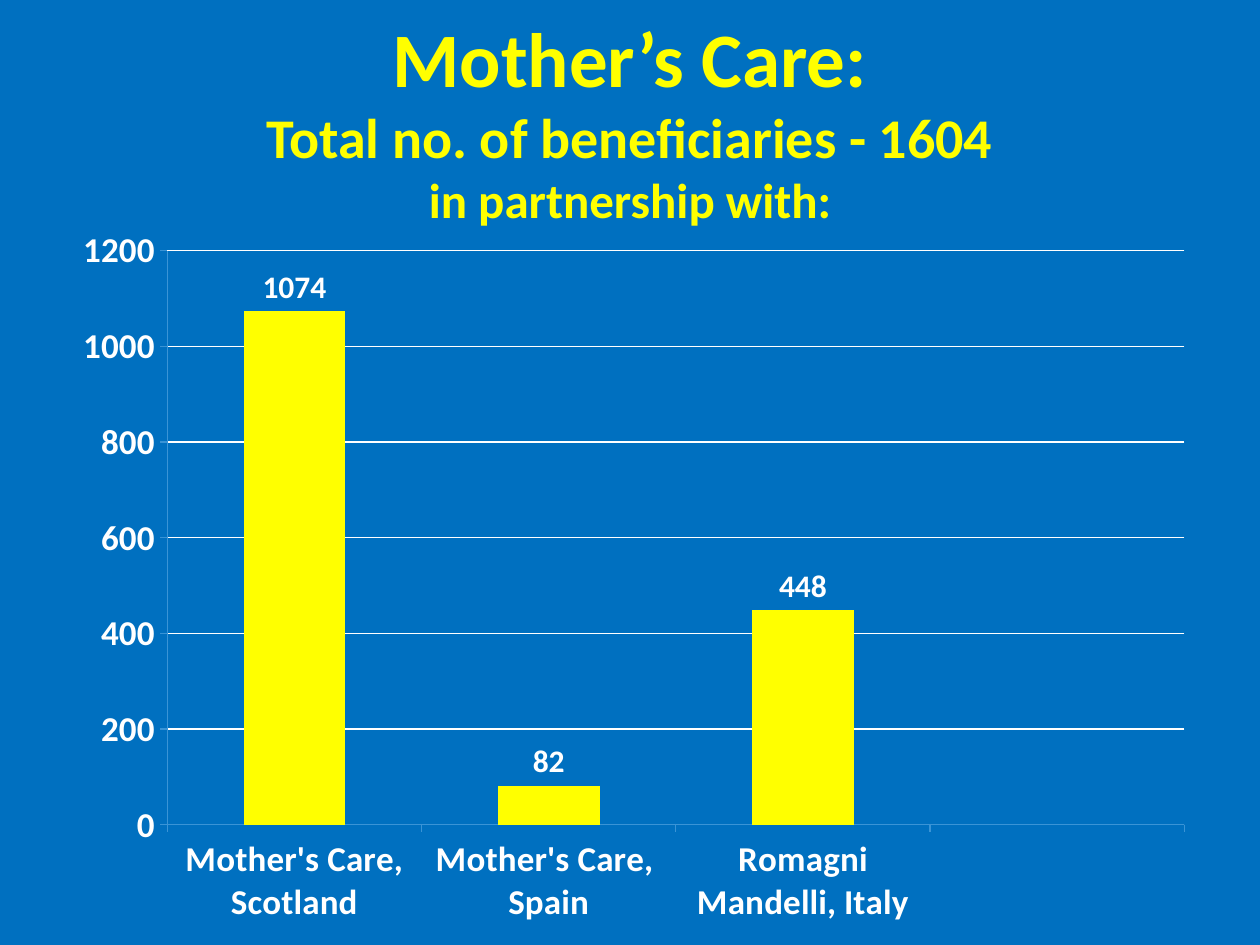
from typing import NamedTuple

from lxml import etree
from pptx import Presentation
from pptx.chart.data import CategoryChartData
from pptx.dml.color import RGBColor
from pptx.enum.chart import XL_CHART_TYPE, XL_LABEL_POSITION, XL_TICK_MARK
from pptx.enum.text import MSO_ANCHOR, PP_ALIGN
from pptx.oxml import parse_xml
from pptx.oxml.ns import nsdecls
from pptx.util import Inches, Pt

COLUMN = XL_CHART_TYPE.COLUMN_CLUSTERED
ABOVE = XL_LABEL_POSITION.OUTSIDE_END
OUT = XL_TICK_MARK.OUTSIDE
MIDDLE, CENTER = MSO_ANCHOR.MIDDLE, PP_ALIGN.CENTER

BLUE, YELLOW, WHITE, EDGE = "0070C0", "FFFF00", "FFFFFF", "3A94D6"
FACE = "Calibri"
WIDE, HIGH = Inches(10), Inches(7.5)


class Box(NamedTuple):
    """A place given in percent of the slide's size."""
    left: float
    top: float
    width: float
    height: float

    def place(self) -> tuple:
        sides = (WIDE, HIGH, WIDE, HIGH)
        return tuple(int(part * side / 100) for part, side in zip(self, sides))


class Line(NamedTuple):
    text: str
    size: int


class Bar(NamedTuple):
    name: str
    count: int | None


TITLE = [
    Line("Mother’s Care:", 44),
    Line("Total no. of beneficiaries - 1604", 32),
    Line("in partnership with:", 28),
]
BARS = [
    Bar("Mother's Care, Scotland", 1074),
    Bar("Mother's Care,  Spain", 82),
    Bar("Romagni Mandelli, Italy", 448),
    Bar("", None),
]
# Inner plot area in percent of the chart's size
PLOT = {"x": 9.2, "y": 4.3, "w": 89.7, "h": 82}


def color(code: str) -> RGBColor:
    return RGBColor.from_string(code)


def style(font, size: int, code: str) -> None:
    form = {"name": FACE, "size": Pt(size), "bold": True}
    for key, value in form.items():
        setattr(font, key, value)
    font.color.rgb = color(code)


def stroke(line, code: str) -> None:
    line.color.rgb = color(code)
    line.width = Pt(0.75)


def add_title(slide, box: Box, lines: list[Line]) -> None:
    frame = slide.shapes.add_textbox(*box.place()).text_frame
    form = {"word_wrap": True, "vertical_anchor": MIDDLE,
            "margin_top": 0, "margin_bottom": 0}
    for key, value in form.items():
        setattr(frame, key, value)
    para = frame.paragraphs[0]
    para.alignment = CENTER
    for spot, line in enumerate(lines):
        if spot:
            para.add_line_break()
        run = para.add_run()
        run.text = line.text
        style(run.font, line.size, YELLOW)


def set_plot(chart) -> None:
    """Fix the inner plot area."""
    area = chart.plots[0]._element.getparent()
    for old in area.findall("{*}layout"):
        area.remove(old)
    layout = parse_xml(f"<c:layout {nsdecls('c')}><c:manualLayout/></c:layout>")
    rules = {"layoutTarget": "inner", "xMode": "edge", "yMode": "edge"}
    rules |= {tag: str(share / 100) for tag, share in PLOT.items()}
    space = etree.QName(layout).namespace
    for tag, value in rules.items():
        etree.SubElement(layout[0], f"{{{space}}}{tag}", val=value)
    area.insert(0, layout)


def add_bars(slide, box: Box, bars: list[Bar]) -> None:
    data = CategoryChartData()
    data.categories = [bar.name for bar in bars]
    data.add_series("Series 1", [bar.count for bar in bars])
    chart = slide.shapes.add_chart(COLUMN, *box.place(), data).chart
    chart.has_legend = chart.has_title = False
    style(chart.font, 18, WHITE)
    set_plot(chart)

    # Columns and their values
    plot = chart.plots[0]
    plot.gap_width, plot.vary_by_categories = 150, False
    fill = plot.series[0].format.fill
    fill.solid()
    fill.fore_color.rgb = color(YELLOW)
    plot.has_data_labels = True
    labels = plot.data_labels
    labels.show_value, labels.position = True, ABOVE
    style(labels.font, 18, WHITE)

    # Axes and grid
    for axis in (chart.category_axis, chart.value_axis):
        axis.major_tick_mark = OUT
        style(axis.tick_labels.font, 20, WHITE)
        stroke(axis.format.line, EDGE)
    scale = chart.value_axis
    limits = {"minimum_scale": 0, "maximum_scale": 1200, "major_unit": 200}
    for key, value in limits.items():
        setattr(scale, key, value)
    stroke(scale.major_gridlines.format.line, WHITE)


def main() -> None:
    deck = Presentation()
    deck.slide_width, deck.slide_height = WIDE, HIGH
    slide = deck.slides.add_slide(deck.slide_layouts[6])
    back = slide.background.fill
    back.solid()
    back.fore_color.rgb = color(BLUE)
    add_title(slide, Box(5, 1.15, 90, 23), TITLE)
    add_bars(slide, Box(5, 23.33, 90, 74.4), BARS)
    deck.save("out.pptx")


if __name__ == "__main__":
    main()
